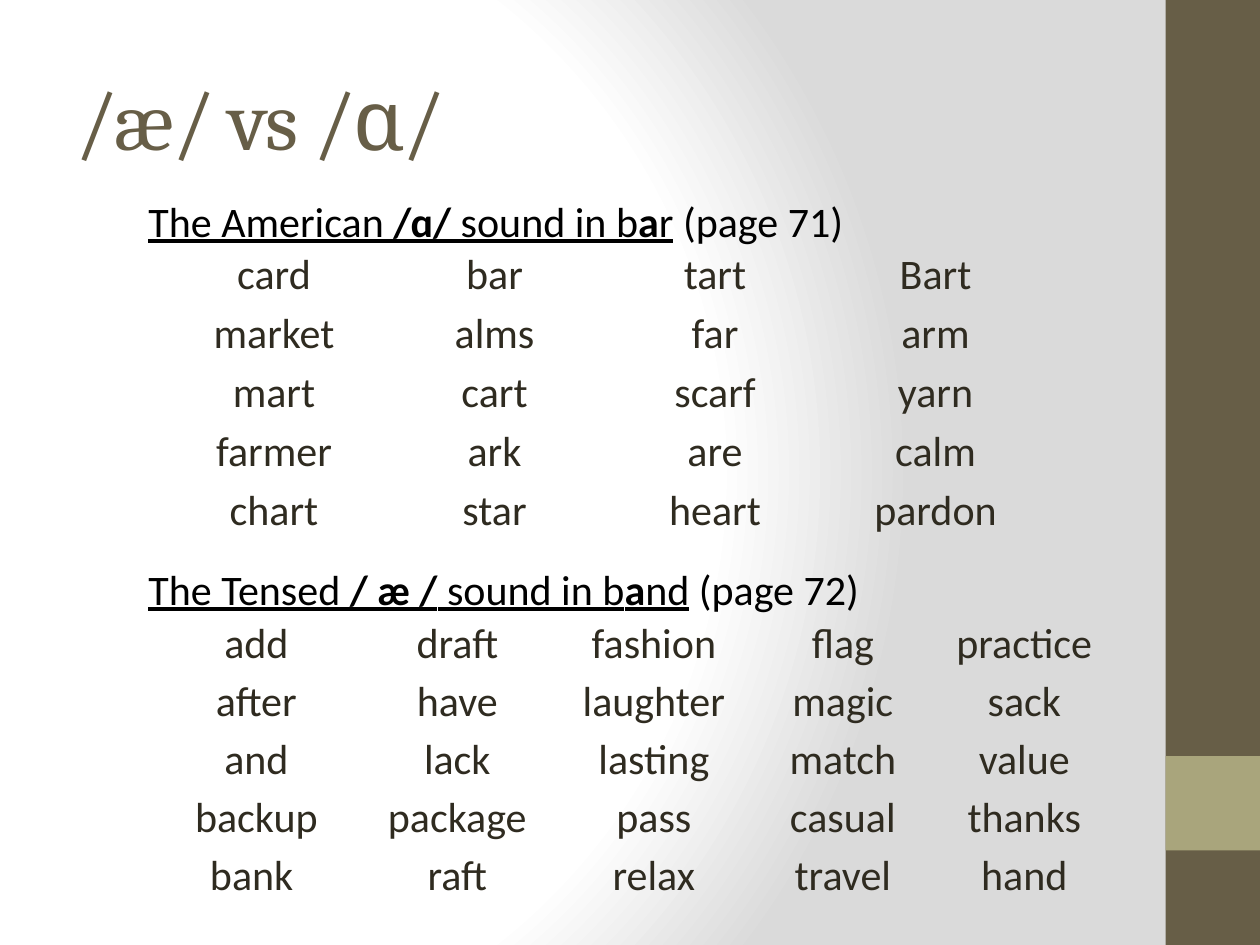
from dataclasses import dataclass

from pptx import Presentation
from pptx.dml.color import RGBColor
from pptx.enum.shapes import MSO_SHAPE
from pptx.enum.text import MSO_ANCHOR, MSO_AUTO_SIZE, PP_ALIGN
from pptx.oxml import parse_xml
from pptx.util import Inches, Pt

RECTANGLE = MSO_SHAPE.RECTANGLE
MIDDLE = MSO_ANCHOR.MIDDLE
LEFT, CENTER = PP_ALIGN.LEFT, PP_ALIGN.CENTER
FIT_SHAPE, NO_FIT = MSO_AUTO_SIZE.SHAPE_TO_FIT_TEXT, MSO_AUTO_SIZE.NONE
TITLE_ONLY = 5
PLAIN_TABLE_STYLE = "{2D5ABB26-0587-4C30-8999-92F81FD0307C}"


@dataclass(frozen=True)
class Theme:
    brown: str = "675E47"
    olive: str = "A9A57C"
    word: str = "2F2B20"
    heading: str = "000000"
    light: str = "FFFFFF"
    shade: str = "DADADA"
    title_font: str = "Cambria"
    body_font: str = "Calibri"
    title_size: int = 48
    body_size: int = 24


THEME = Theme()

BAR_WORDS = (
    ("card", "bar", "tart", "Bart"),
    ("market", "alms", "far", "arm"),
    ("mart", "cart", "scarf", "yarn"),
    ("farmer", "ark", "are", "calm"),
    ("chart", "star", "heart", "pardon"),
)
BAND_WORDS = (
    ("add", "draft", "fashion", "flag", "practice"),
    ("after", "have", "laughter", "magic", "sack"),
    ("and", "lack", "lasting", "match", "value"),
    ("backup", "package", "pass", "casual", "thanks"),
    ("bank ", "raft", "relax", "travel", "hand"),
)


def set_font(paragraph, name, size, color):
    paragraph.font.name = name
    paragraph.font.size = Pt(size)
    paragraph.font.color.rgb = RGBColor.from_string(color)


def set_background(slide):
    """Give the slide a circular gradient centred left of the middle."""
    stops = "".join(
        f'<a:gs pos="{percent * 1000}"><a:srgbClr val="{color}"/></a:gs>'
        for percent, color in ((0, THEME.light), (75, THEME.light), (100, THEME.shade))
    )
    background = parse_xml(
        '<p:bg xmlns:p="http://schemas.openxmlformats.org/presentationml/2006/main"'
        ' xmlns:a="http://schemas.openxmlformats.org/drawingml/2006/main">'
        f'<p:bgPr><a:gradFill rotWithShape="1"><a:gsLst>{stops}</a:gsLst>'
        '<a:path path="circle">'
        '<a:fillToRect l="20000" t="50000" r="100000" b="50000"/></a:path>'
        '</a:gradFill><a:effectLst/></p:bgPr></p:bg>'
    )
    slide.element.cSld.insert(0, background)


def add_side_block(slide, top, height, color):
    block = slide.shapes.add_shape(
        RECTANGLE, Inches(9.25), Inches(top), Inches(0.75), Inches(height))
    block.shadow.inherit = False
    block.fill.solid()
    block.fill.fore_color.rgb = RGBColor.from_string(color)
    block.line.fill.background()


def set_title(slide, text):
    title = slide.shapes.title
    title.left, title.top = Inches(0.5), Inches(0.3)
    title.width, title.height = Inches(8.33), Inches(1.25)
    frame = title.text_frame
    frame.text = text
    frame.vertical_anchor = MIDDLE
    frame.auto_size = NO_FIT
    paragraph = frame.paragraphs[0]
    paragraph.alignment = LEFT
    set_font(paragraph, THEME.title_font, THEME.title_size, THEME.brown)
    paragraph.runs[0].font._element.set("spc", "-100")


def add_heading(slide, top, width, parts, page):
    """Write underlined parts, every second one bold, then a plain page note."""
    box = slide.shapes.add_textbox(Inches(1.08), Inches(top), Inches(width), Inches(0.5))
    frame = box.text_frame
    frame.word_wrap = False
    frame.auto_size = FIT_SHAPE
    frame.vertical_anchor = MIDDLE
    paragraph = frame.paragraphs[0]
    set_font(paragraph, THEME.body_font, THEME.body_size, THEME.heading)
    for index, part in enumerate(parts):
        run = paragraph.add_run()
        run.text = part
        run.font.underline = True
        run.font.bold = index % 2 == 1
    paragraph.add_run().text = f" (page {page})"


def fill_cell(cell, word):
    cell.fill.background()
    cell.margin_left = cell.margin_right = Inches(0.07)
    cell.margin_top = cell.margin_bottom = 0
    cell.text = word
    paragraph = cell.text_frame.paragraphs[0]
    paragraph.alignment = CENTER
    paragraph.line_spacing = 1.15
    paragraph.space_after = Pt(6)
    set_font(paragraph, THEME.body_font, THEME.body_size, THEME.word)


def add_word_table(slide, left, top, widths, words):
    frame = slide.shapes.add_table(
        len(words), len(widths), Inches(left), Inches(top),
        Inches(sum(widths)), Inches(0.46 * len(words)))
    table = frame.table
    table.first_row = table.horz_banding = False
    table._tbl.tblPr[0].text = PLAIN_TABLE_STYLE
    for column, width in zip(table.columns, widths):
        column.width = Inches(width)
    for row, row_words in zip(table.rows, words):
        for cell, word in zip(row.cells, row_words):
            fill_cell(cell, word)


def main():
    presentation = Presentation()
    presentation.slide_width, presentation.slide_height = Inches(10), Inches(7.5)
    slide = presentation.slides.add_slide(presentation.slide_layouts[TITLE_ONLY])
    set_background(slide)
    add_side_block(slide, 0, 7.5, THEME.brown)
    add_side_block(slide, 6, 0.75, THEME.olive)
    set_title(slide, "/æ/ vs /ɑ/")
    add_word_table(slide, 1.3, 1.92, [1.75] * 4, BAR_WORDS)
    add_heading(slide, 1.5, 5.77,
                ("The American ", "/ɑ/", " sound in b", "a", "r"), 71)
    add_word_table(slide, 1.25, 4.85, [1.57, 1.62, 1.5, 1.5, 1.38], BAND_WORDS)
    add_heading(slide, 4.42, 5.9,
                ("The Tensed ", "/", " ", "æ /", " sound in b", "a", "nd"), 72)
    presentation.save("out.pptx")


if __name__ == "__main__":
    main()
